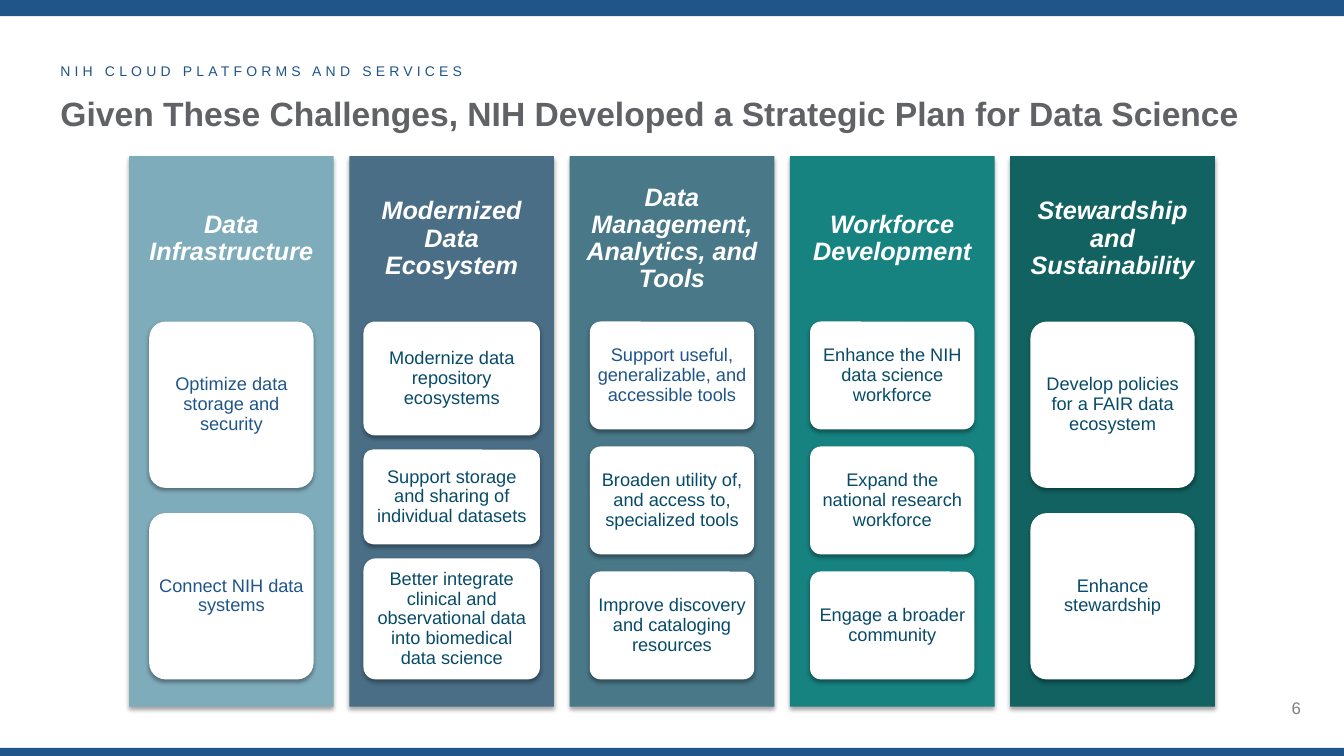
from lxml.etree import SubElement
from pptx import Presentation
from pptx.dml.color import RGBColor
from pptx.enum.shapes import MSO_SHAPE
from pptx.enum.text import MSO_ANCHOR, PP_ALIGN
from pptx.oxml.ns import qn
from pptx.util import Inches, Pt

COLORS = {
    "blue": "20558A", "teal": "074B69", "gray": "616265", "number": "7F7F7F",
    "white": "FFFFFF", "black": "000000", "infrastructure": "7FACBB",
    "ecosystem": "4A6E86", "tools": "497888", "workforce": "178381",
    "stewardship": "116261",
}

GOALS = [
    ("Data Infrastructure", "infrastructure", 1.63, [
        ("Optimize data storage and security", "blue", 1.65),
        ("Connect NIH data systems", "blue", 1.65)]),
    ("Modernized Data Ecosystem", "ecosystem", 1.75, [
        ("Modernize data repository ecosystems", "teal", 1.13),
        ("Support storage and sharing of individual datasets", "teal", 0.94),
        ("Better integrate clinical and observational data into biomedical data science",
         "teal", 1.2)]),
    ("Data Management, Analytics, and Tools", "tools", 1.63, [
        ("Support useful, generalizable, and accessible tools", "blue", 1.07),
        ("Broaden utility of, and access to, specialized tools", "teal", 1.07),
        ("Improve discovery and cataloging resources", "teal", 1.07)]),
    ("Workforce Development", "workforce", 1.63, [
        ("Enhance the NIH data science workforce", "teal", 1.07),
        ("Expand the national research workforce", "teal", 1.07),
        ("Engage a broader community", "teal", 1.07)]),
    ("Stewardship and Sustainability", "stewardship", 1.63, [
        ("Develop policies for a FAIR data ecosystem", "teal", 1.65),
        ("Enhance stewardship", "teal", 1.65)]),
]

FIRST_LEFT, LAST_LEFT = 1.28, 10.02
COLUMN_TOP, COLUMN_WIDTH, COLUMN_HEIGHT = 1.55, 2.03, 5.46
CARDS_TOP, CARDS_HEIGHT = 3.19, 3.55


class PlanSlide:
    """Holds the style and the current slide, and draws its elements."""

    font_name = "Arial"

    def __init__(self, deck):
        self.slide = deck.slides.add_slide(deck.slide_layouts[5])
        self.shapes = self.slide.shapes

    def fill_text(self, holder, words, size, color, align=PP_ALIGN.LEFT,
                  anchor=MSO_ANCHOR.TOP, insets=(0.1, 0.05), spacing=1.0, **styles):
        frame = holder.text_frame
        side, end = (Inches(inset) for inset in insets)
        layout = {"word_wrap": True, "vertical_anchor": anchor,
                  "margin_left": side, "margin_right": side,
                  "margin_top": end, "margin_bottom": end}
        for key, value in layout.items():
            setattr(frame, key, value)
        paragraph = frame.paragraphs[0]
        paragraph.alignment = align
        paragraph.line_spacing = spacing
        run = paragraph.add_run()
        run.text = words
        styles.update(name=self.font_name, size=Pt(size))
        for key, value in styles.items():
            setattr(run.font, key, value)
        run.font.color.rgb = RGBColor.from_string(COLORS[color])
        return run

    def title(self, box, words):
        heading = self.shapes.title
        for key, value in zip(("left", "top", "width", "height"), box):
            setattr(heading, key, Inches(value))
        self.fill_text(heading, words, 24, "gray", bold=True)

    def text(self, box, words, size, color, **options):
        holder = self.shapes.add_textbox(*map(Inches, box))
        return self.fill_text(holder, words, size, color, **options)

    def block(self, box, color, kind=MSO_SHAPE.RECTANGLE, raised=True):
        panel = self.shapes.add_shape(kind, *map(Inches, box))
        panel.fill.solid()
        panel.fill.fore_color.rgb = RGBColor.from_string(COLORS[color])
        panel.line.fill.background()
        panel.shadow.inherit = False
        if raised:
            effects = panel.element.spPr.find(qn("a:effectLst"))
            shadow = SubElement(effects, qn("a:outerShdw"), blurRad=str(Pt(3.1)),
                                dist=str(Pt(1.8)), dir="5400000", rotWithShape="0")
            tint = SubElement(shadow, qn("a:srgbClr"), val=COLORS["black"])
            SubElement(tint, qn("a:alpha"), val="35000")
        return panel

    def card(self, box, words, color):
        panel = self.block(box, "white", MSO_SHAPE.ROUNDED_RECTANGLE)
        panel.adjustments[0] = 0.1
        self.fill_text(panel, words, 13, color, align=PP_ALIGN.CENTER,
                       anchor=MSO_ANCHOR.MIDDLE, insets=(0.04, 0.03), spacing=0.9)

    def column(self, left, heading, color, card_width, objectives):
        self.block((left, COLUMN_TOP, COLUMN_WIDTH, COLUMN_HEIGHT), color)
        self.text((left, COLUMN_TOP, COLUMN_WIDTH, CARDS_TOP - COLUMN_TOP),
                  heading, 18, "white", align=PP_ALIGN.CENTER,
                  anchor=MSO_ANCHOR.MIDDLE, insets=(0.07, 0.07), spacing=0.9,
                  bold=True, italic=True)
        filled = sum(height for _, _, height in objectives)
        gap = (CARDS_HEIGHT - filled) / (len(objectives) - 1)
        card_left = left + (COLUMN_WIDTH - card_width) / 2
        top = CARDS_TOP
        for words, text_color, height in objectives:
            self.card((card_left, top, card_width, height), words, text_color)
            top += height + gap


def main():
    deck = Presentation()
    deck.slide_width, deck.slide_height = Inches(13.33), Inches(7.5)
    plan = PlanSlide(deck)
    for bar_top in (7.42, -0.02):
        plan.block((0, bar_top, 13.33, 0.18), "blue", raised=False)
    plan.title((0.5, 0.87, 12.33, 0.5),
               "Given These Challenges, NIH Developed a Strategic Plan for Data Science")
    section = plan.text((0.5, 0.57, 8.21, 0.34),
                        "NIH CLOUD PLATFORMS AND SERVICES", 10, "blue")
    section._r.get_or_add_rPr().set("spc", "300")
    plan.text((9.89, 6.82, 3.11, 0.4), "6", 12, "number",
              align=PP_ALIGN.RIGHT, anchor=MSO_ANCHOR.MIDDLE)
    pitch = (LAST_LEFT - FIRST_LEFT) / (len(GOALS) - 1)
    for index, goal in enumerate(GOALS):
        plan.column(FIRST_LEFT + index * pitch, *goal)
    deck.save("out.pptx")


if __name__ == "__main__":
    main()
